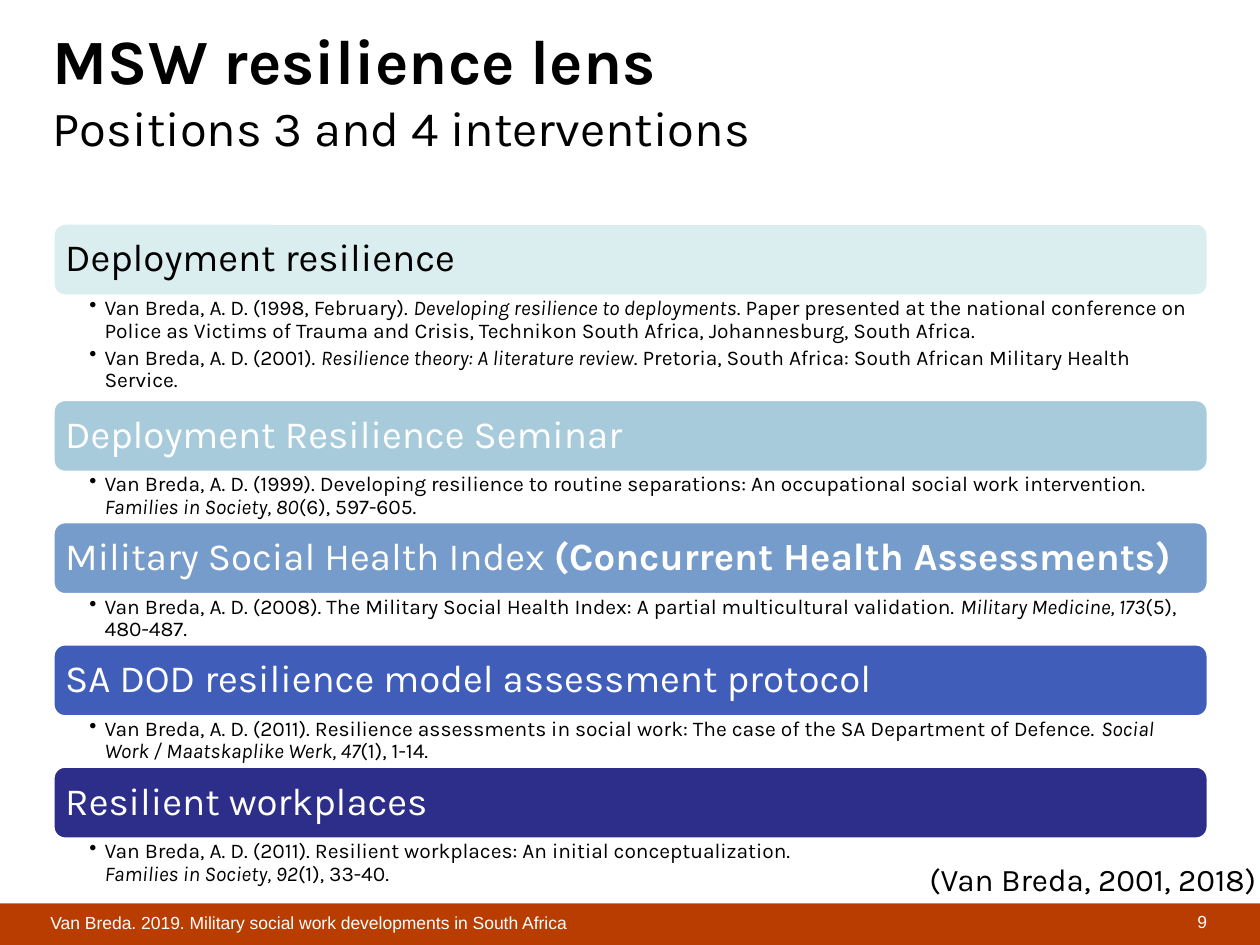
from dataclasses import dataclass

from pptx import Presentation
from pptx.dml.color import RGBColor
from pptx.enum.shapes import MSO_SHAPE as Shape
from pptx.enum.text import MSO_ANCHOR as Anchor, PP_ALIGN as Align
from pptx.oxml.ns import qn
from pptx.util import Inches, Pt
from lxml.etree import SubElement

BLACK = RGBColor(0x00, 0x00, 0x00)
WHITE = RGBColor(0xFF, 0xFF, 0xFF)
RUST = RGBColor(0xB9, 0x3C, 0x00)
PALE_AQUA = RGBColor(0xDA, 0xED, 0xEF)
LIGHT_BLUE = RGBColor(0xA8, 0xCB, 0xDC)
MID_BLUE = RGBColor(0x75, 0x9C, 0xCB)
ROYAL_BLUE = RGBColor(0x41, 0x5D, 0xBA)
NAVY = RGBColor(0x2D, 0x2D, 0x8A)

LEFT, WIDTH = 0.42, 9.17
FIRST_TOP, BAR_HEIGHT, LIST_OFFSET = 1.77, 0.58, 0.57


@dataclass
class Reference:
    lead: str
    italic: str
    rest: str
    break_before_italic: bool = False


@dataclass
class Section:
    heading: str
    fill: RGBColor
    references: list[Reference]
    list_height: float = 0.4
    color: RGBColor = WHITE
    bold_heading: str = ""


SECTIONS = [
    Section("Deployment resilience", PALE_AQUA, [
        Reference("Van Breda, A. D. (1998, February). ", "Developing resilience to deployments",
                  ". Paper presented at the national conference on Police as Victims of Trauma "
                  "and Crisis, Technikon South Africa, Johannesburg, South Africa."),
        Reference("Van Breda, A. D. (2001). ", "Resilience theory: A literature review",
                  ". Pretoria, South Africa: South African Military Health Service."),
    ], list_height=0.83, color=BLACK),
    Section("Deployment Resilience Seminar", LIGHT_BLUE, [
        Reference("Van Breda, A. D. (1999). Developing resilience to routine separations: "
                  "An occupational social work intervention. ",
                  "Families in Society, 80", "(6), 597-605."),
    ]),
    Section("Military Social Health Index ", MID_BLUE, [
        Reference("Van Breda, A. D. (2008). The Military Social Health Index: "
                  "A partial multicultural validation. ",
                  "Military Medicine, 173", "(5), 480-487."),
    ], bold_heading="(Concurrent Health Assessments)"),
    Section("SA DOD resilience model assessment protocol", ROYAL_BLUE, [
        Reference("Van Breda, A. D. (2011). Resilience assessments in social work: "
                  "The case of the SA Department of Defence. ",
                  "Social Work / Maatskaplike Werk, 47", "(1), 1-14."),
    ]),
    Section("Resilient workplaces", NAVY, [
        Reference("Van Breda, A. D. (2011). Resilient workplaces: An initial conceptualization. ",
                  "Families in Society, 92", "(1), 33-40.", break_before_italic=True),
    ]),
]


def set_insets(frame, left: float, top: float, right: float, bottom: float) -> None:
    frame.word_wrap = True
    frame.margin_left, frame.margin_top = Inches(left), Inches(top)
    frame.margin_right, frame.margin_bottom = Inches(right), Inches(bottom)


def set_font(font, name: str, size: float, color: RGBColor) -> None:
    font.name, font.size = name, Pt(size)
    font.color.rgb = color


def add_run(paragraph, text: str):
    run = paragraph.add_run()
    run.text = text
    return run


def add_text(slide, left: float, top: float, width: float, height: float, insets: tuple):
    box = slide.shapes.add_textbox(Inches(left), Inches(top), Inches(width), Inches(height))
    set_insets(box.text_frame, *insets)
    return box.text_frame


def add_line(slide, text: str, place: tuple, font: str, size: float, color: RGBColor,
             align=Align.LEFT, anchor=Anchor.TOP, insets: tuple = (0, 0, 0, 0)) -> None:
    frame = add_text(slide, *place, insets)
    frame.vertical_anchor = anchor
    line = frame.paragraphs[0]
    line.alignment = align
    add_run(line, text)
    set_font(line.font, font, size, color)


def add_block(slide, kind, place: tuple, fill: RGBColor):
    block = slide.shapes.add_shape(kind, *(Inches(value) for value in place))
    block.shadow.inherit = False
    block.fill.solid()
    block.fill.fore_color.rgb = fill
    return block


def add_reference(paragraph, reference: Reference) -> None:
    properties = paragraph._p.get_or_add_pPr()
    properties.set("marL", str(Inches(0.12)))
    properties.set("indent", str(Inches(-0.12)))
    SubElement(properties, qn("a:buChar")).set("char", "•")
    paragraph.line_spacing = 0.9
    paragraph.space_after = Pt(2.4)
    add_run(paragraph, reference.lead)
    if reference.break_before_italic:
        paragraph.add_line_break()
    add_run(paragraph, reference.italic).font.italic = True
    add_run(paragraph, reference.rest)
    set_font(paragraph.font, "Karla", 12, BLACK)


def add_section(slide, section: Section, top: float) -> float:
    """Draw a heading bar with its references and return the next top."""
    bar = add_block(slide, Shape.ROUNDED_RECTANGLE, (LEFT, top, WIDTH, BAR_HEIGHT), section.fill)
    bar.line.color.rgb = WHITE
    bar.line.width = Pt(2)
    set_insets(bar.text_frame, 0.07, 0.09, 0.07, 0.09)
    bar.text_frame.vertical_anchor = Anchor.MIDDLE
    heading = bar.text_frame.paragraphs[0]
    heading.alignment = Align.LEFT
    heading.line_spacing = 0.9
    add_run(heading, section.heading)
    if section.bold_heading:
        add_run(heading, section.bold_heading).font.bold = True
    set_font(heading.font, "Karla", 22, section.color)

    list_top = top + LIST_OFFSET
    frame = add_text(slide, LEFT, list_top, WIDTH, section.list_height,
                     (0.29, 0.02, 0.09, 0.02))
    for index, reference in enumerate(section.references):
        add_reference(frame.add_paragraph() if index else frame.paragraphs[0], reference)
    return list_top + section.list_height


def main() -> None:
    deck = Presentation()
    deck.slide_width, deck.slide_height = Inches(10), Inches(7.5)
    slide = deck.slides.add_slide(deck.slide_layouts[6])

    # Footer band
    band = add_block(slide, Shape.RECTANGLE, (0, 7.17, 10, 0.33), RUST)
    band.line.fill.background()

    # Title and subtitle
    title = add_text(slide, LEFT, 0.17, 7.92, 1.25, (0, 0, 0, 0)).paragraphs[0]
    name = add_run(title, "MSW resilience lens")
    set_font(name.font, "Karla", 36, BLACK)
    name.font.bold = True
    title.add_line_break()
    set_font(add_run(title, "Positions 3 and 4 interventions").font, "Karla", 28, BLACK)

    # Interventions with their references
    top = FIRST_TOP
    for section in SECTIONS:
        top = add_section(slide, section, top)

    # Footer text and citation
    add_line(slide, "9", (7.5, 7.23, 2.08, 0.23), "Arial", 10, WHITE, Align.RIGHT)
    add_line(slide, "Van Breda. 2019. Military social work developments in South Africa",
             (0.4, 7.18, 4.17, 0.28), "Arial", 10, WHITE, anchor=Anchor.MIDDLE)
    add_line(slide, "(Van Breda, 2001, 2018)", (4.21, 6.78, 5.86, 0.4), "Karla", 18, BLACK,
             Align.RIGHT, insets=(0.1, 0.05, 0.1, 0.05))

    deck.save("out.pptx")


if __name__ == "__main__":
    main()
